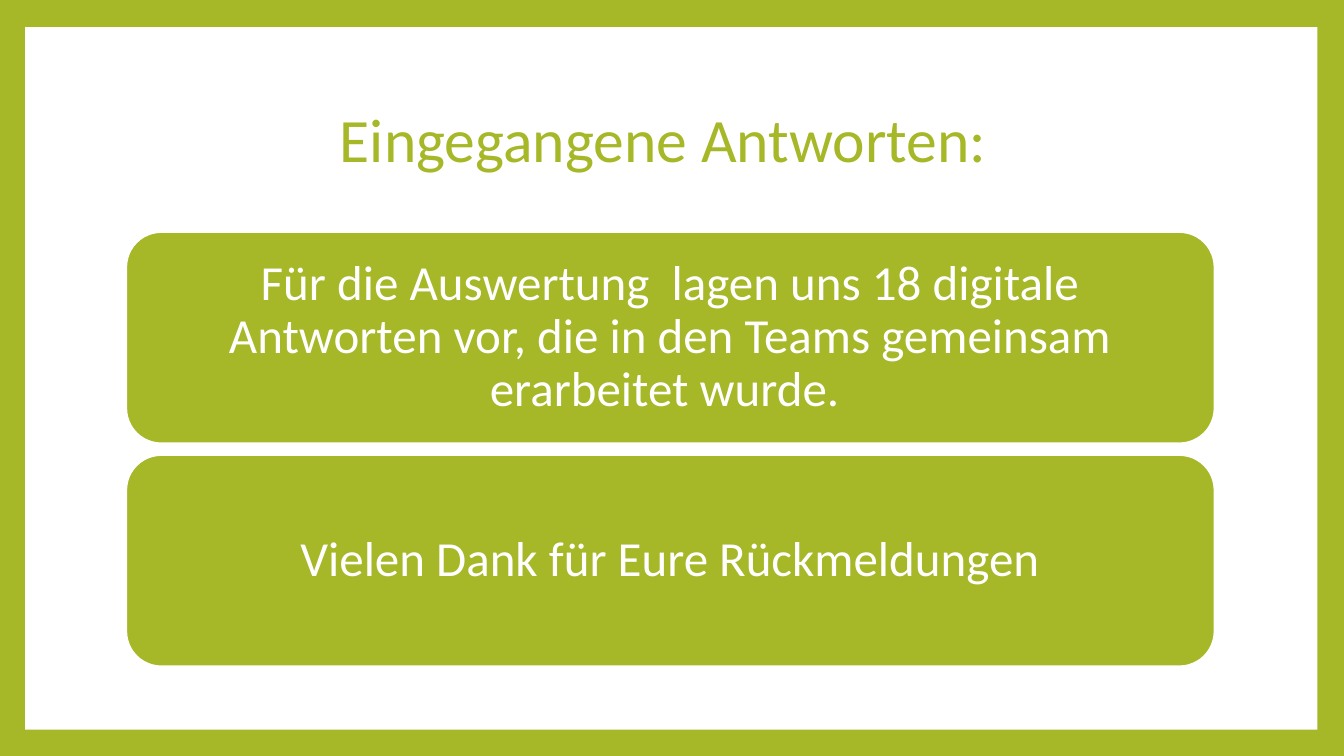
from dataclasses import dataclass

from pptx import Presentation
from pptx.dml.color import RGBColor
from pptx.enum.shapes import MSO_SHAPE
from pptx.enum.text import MSO_ANCHOR, PP_ALIGN
from pptx.shapes.autoshape import Shape
from pptx.slide import Slide
from pptx.text.text import TextFrame
from pptx.util import Inches, Pt

RECTANGLE = MSO_SHAPE.RECTANGLE
ROUNDED = MSO_SHAPE.ROUNDED_RECTANGLE
MIDDLE = MSO_ANCHOR.MIDDLE
CENTER = PP_ALIGN.CENTER

SLIDE_WIDTH, SLIDE_HEIGHT = Inches(13.333), Inches(7.5)
GREEN, WHITE = "A6B727", "FFFFFF"
FONT = "Calibri"
TITLE_ONLY = 5

# Shares of the slide, in percent
CONTENT_LEFT, CONTENT_WIDTH = 9.38, 81
CARD_TOP, CARD_HEIGHT, CARD_PITCH = 30.67, 28, 29.5


@dataclass(frozen=True)
class Area:
    """A rectangle in percent of the slide's width and height."""
    left: float
    top: float
    width: float
    height: float

    def lengths(self) -> tuple[int, int, int, int]:
        return (int(SLIDE_WIDTH * self.left / 100), int(SLIDE_HEIGHT * self.top / 100),
                int(SLIDE_WIDTH * self.width / 100), int(SLIDE_HEIGHT * self.height / 100))


@dataclass(frozen=True)
class Card:
    row: int
    message: str

    def area(self) -> Area:
        return Area(CONTENT_LEFT, CARD_TOP + self.row * CARD_PITCH, CONTENT_WIDTH, CARD_HEIGHT)


PANEL_AREA = Area(1.88, 3.6, 96.15, 92.93)
TITLE_AREA = Area(CONTENT_LEFT, 8.93, CONTENT_WIDTH, 19.73)
CARDS = [
    Card(0, "Für die Auswertung  lagen uns 18 digitale Antworten vor, "
            "die in den Teams gemeinsam erarbeitet wurde. "),
    Card(1, "Vielen Dank für Eure Rückmeldungen"),
]


def color(hex_code: str) -> RGBColor:
    return RGBColor.from_string(hex_code)


def write(frame: TextFrame, text: str, size: float, hex_code: str) -> None:
    frame.word_wrap = True
    frame.vertical_anchor = MIDDLE
    paragraph = frame.paragraphs[0]
    paragraph.alignment = CENTER
    paragraph.line_spacing = 0.9
    run = paragraph.add_run()
    run.text = text
    run.font.name = FONT
    run.font.size = Pt(size)
    run.font.color.rgb = color(hex_code)


def add_block(slide: Slide, kind: MSO_SHAPE, area: Area, fill: str) -> Shape:
    block = slide.shapes.add_shape(kind, *area.lengths())
    block.shadow.inherit = False
    block.fill.solid()
    block.fill.fore_color.rgb = color(fill)
    block.line.fill.background()
    return block


def add_card(slide: Slide, card: Card) -> None:
    block = add_block(slide, ROUNDED, card.area(), GREEN)
    block.line.color.rgb = color(WHITE)
    block.line.width = Pt(1.5)
    frame = block.text_frame
    frame.margin_left = frame.margin_right = Inches(0.25)
    frame.margin_top = frame.margin_bottom = Inches(0.25)
    write(frame, card.message, 35, WHITE)


def main() -> None:
    deck = Presentation()
    deck.slide_width, deck.slide_height = SLIDE_WIDTH, SLIDE_HEIGHT
    slide = deck.slides.add_slide(deck.slide_layouts[TITLE_ONLY])

    # Green frame around a white panel
    slide.background.fill.solid()
    slide.background.fill.fore_color.rgb = color(GREEN)
    panel = add_block(slide, RECTANGLE, PANEL_AREA, WHITE)

    # Title, in front of the panel
    title = slide.shapes.title
    title.element.addprevious(panel.element)
    title.left, title.top, title.width, title.height = TITLE_AREA.lengths()
    write(title.text_frame, "Eingegangene Antworten: ", 44, GREEN)

    # Message cards
    for card in CARDS:
        add_card(slide, card)

    deck.save("out.pptx")


if __name__ == "__main__":
    main()
